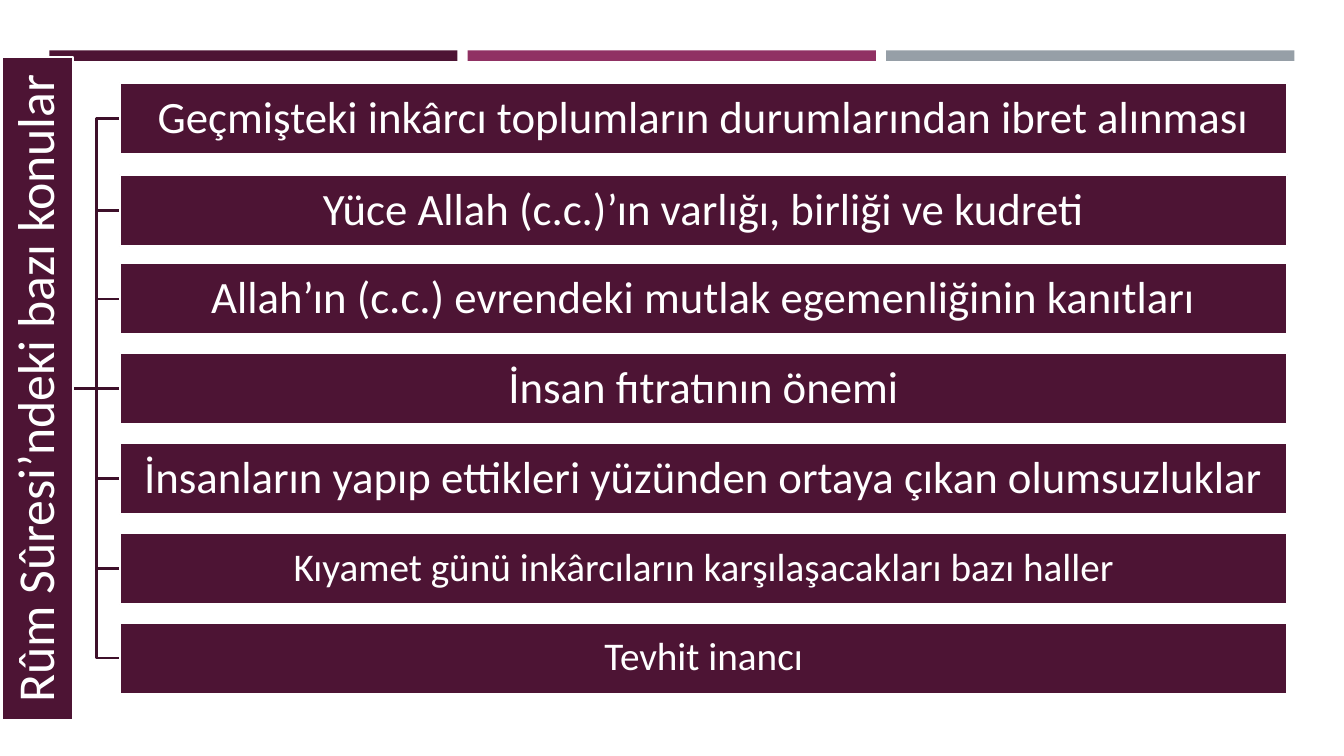
from lxml.etree import SubElement
from pptx import Presentation
from pptx.dml.color import RGBColor
from pptx.enum.shapes import MSO_CONNECTOR, MSO_SHAPE
from pptx.enum.text import MSO_ANCHOR, MSO_AUTO_SIZE, PP_ALIGN
from pptx.oxml.ns import qn
from pptx.util import Pt

PLUM = RGBColor(0x4D, 0x14, 0x34)
DARK = RGBColor(0x3E, 0x10, 0x2A)
BERRY = RGBColor(0x90, 0x31, 0x63)
GREY = RGBColor(0x96, 0x9F, 0xA7)
WHITE = RGBColor(0xFF, 0xFF, 0xFF)


def fill_box(sp, text, size, inset):
    sp.fill.solid()
    sp.fill.fore_color.rgb = PLUM
    sp.line.color.rgb = WHITE
    sp.line.width = Pt(1.75)
    tf = sp.text_frame
    tf.word_wrap = True
    tf.auto_size = MSO_AUTO_SIZE.NONE
    tf.vertical_anchor = MSO_ANCHOR.MIDDLE
    tf.margin_left = tf.margin_right = Pt(inset)
    tf.margin_top = tf.margin_bottom = Pt(inset)
    p = tf.paragraphs[0]
    p.alignment = PP_ALIGN.CENTER
    p.line_spacing = 0.9
    r = p.add_run()
    r.text = text
    r.font.name = "Calibri"
    r.font.size = Pt(size)
    r.font.color.rgb = WHITE


prs = Presentation()
prs.slide_width, prs.slide_height = Pt(960), Pt(540)
s = prs.slides.add_slide(prs.slide_layouts[5])

for i, color in enumerate((PLUM, BERRY, GREY)):
    sp = s.shapes.add_shape(MSO_SHAPE.RECTANGLE, Pt(35.2 + 298.9 * i), Pt(36),
                            Pt(291.6), Pt(7.5))
    sp.shadow.inherit = False
    sp.fill.solid()
    sp.fill.fore_color.rgb = color
    sp.line.fill.background()

topics = [
    (59.2, 32, "Geçmişteki inkârcı toplumların durumlarından ibret alınması"),
    (124.8, 32, "Yüce Allah (c.c.)’ın varlığı, birliği ve kudreti"),
    (188, 32, "Allah’ın (c.c.) evrendeki mutlak egemenliğinin kanıtları"),
    (252, 32, "İnsan fıtratının önemi"),
    (316.2, 32, "İnsanların yapıp ettikleri yüzünden ortaya çıkan olumsuzluklar"),
    (380.4, 28, "Kıyamet günü inkârcıların karşılaşacakları bazı haller"),
    (444.5, 28, "Tevhit inancı"),
]
row_h = 51.1
start, bend, end = Pt(52.5), Pt(69.1), Pt(85.7)
hub = Pt(252 + row_h / 2)

for top, size, text in topics:
    y = Pt(top + row_h / 2)
    if y == hub:
        branch = s.shapes.add_connector(MSO_CONNECTOR.STRAIGHT, start, y, end, y)
        SubElement(branch._element.spPr, qn("a:effectLst"))
    else:
        path = s.shapes.build_freeform(start, hub)
        path.add_line_segments([(bend, hub), (bend, y), (end, y)], close=False)
        branch = path.convert_to_shape()
        branch.shadow.inherit = False
        branch.fill.background()
    branch.line.color.rgb = DARK
    branch.line.width = Pt(1.75)

title = s.shapes.title
title.left, title.top, title.width, title.height = Pt(-210.3), Pt(252), Pt(473.8), Pt(row_h)
title.rotation = 270
fill_box(title, "Rûm Sûresi’ndeki bazı konular", 37, 2)
s.shapes._spTree.append(title._element)

for top, size, text in topics:
    sp = s.shapes.add_shape(MSO_SHAPE.RECTANGLE, end, Pt(top), Pt(833.8), Pt(row_h))
    sp.shadow.inherit = False
    fill_box(sp, text, size, 1.5)

prs.save("out.pptx")
